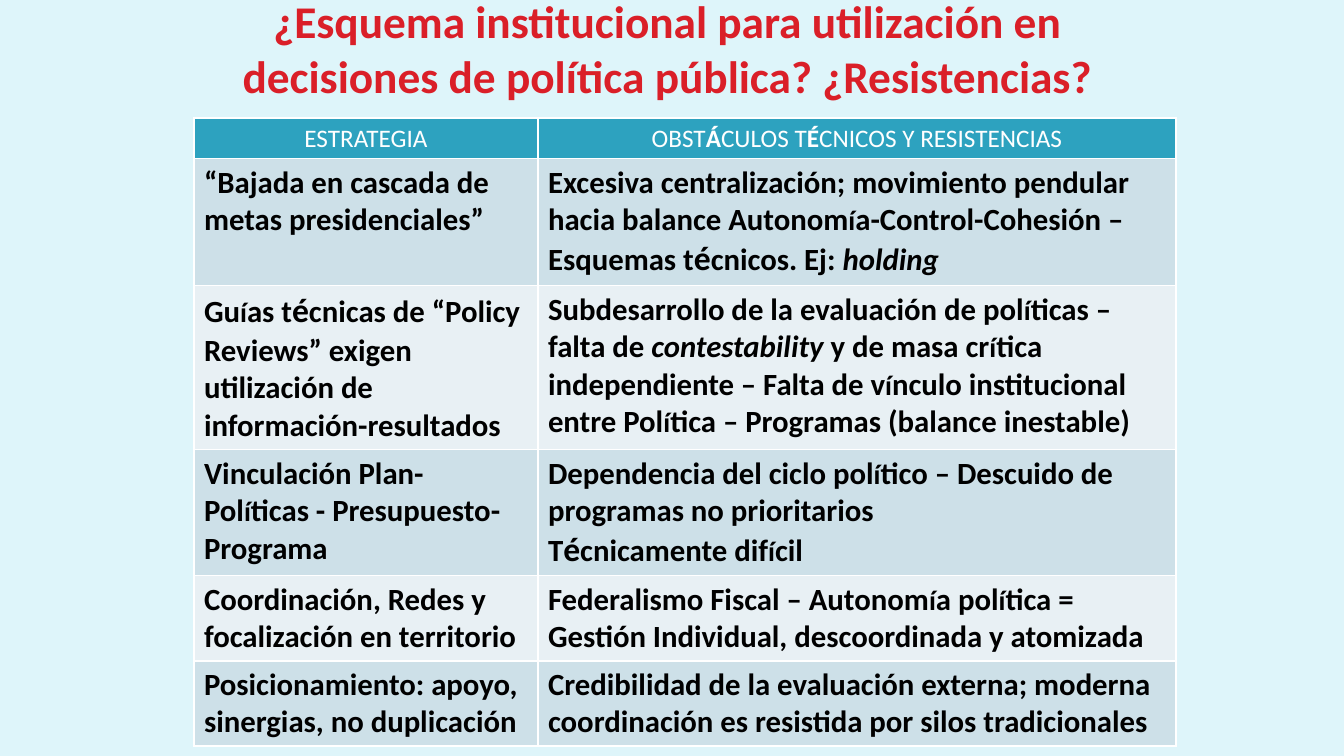
from itertools import groupby

from pptx import Presentation
from pptx.dml.color import RGBColor
from pptx.enum.text import MSO_ANCHOR, MSO_AUTO_SIZE, PP_ALIGN
from pptx.util import Emu, Pt

RED = RGBColor(0xDA, 0x1F, 0x28)
TEAL = RGBColor(0x2D, 0xA2, 0xBF)
PALE = RGBColor(0xDE, 0xF5, 0xFA)
DARK = RGBColor(0xCD, 0xE0, 0xE8)
LIGHT = RGBColor(0xE8, 0xF0, 0xF4)
WHITE = RGBColor(0xFF, 0xFF, 0xFF)
BLACK = RGBColor(0x00, 0x00, 0x00)

TITLE = "¿Esquema institucional para utilización en decisiones de política pública? ¿Resistencias?"
HEADS = ["ESTRATEGIA", "OBSTÁCULOS TÉCNICOS Y RESISTENCIAS"]
# Asterisks enclose italic words
ROWS = [
    ["“Bajada en cascada de metas presidenciales”",
     "Excesiva centralización; movimiento pendular hacia balance "
     "Autonomía-Control-Cohesión – Esquemas técnicos. Ej: *holding*"],
    ["Guías técnicas de “Policy Reviews” exigen utilización de información-resultados",
     "Subdesarrollo de la evaluación de políticas – falta de *contestability* y de masa "
     "crítica independiente – Falta de vínculo institucional entre Política – Programas "
     "(balance inestable)"],
    ["Vinculación Plan-Políticas - Presupuesto-Programa",
     "Dependencia del ciclo político – Descuido de programas no prioritarios\n"
     "Técnicamente difícil"],
    ["Coordinación, Redes y focalización en territorio",
     "Federalismo Fiscal – Autonomía política = Gestión Individual, descoordinada y atomizada"],
    ["Posicionamiento: apoyo, sinergias, no duplicación",
     "Credibilidad de la evaluación externa; moderna coordinación es resistida por silos "
     "tradicionales"],
]
WIDTHS = [344, 638]
HEIGHTS = [40, 127, 164, 126, 85, 85]
SIZES = {"í": 20, "é": 24}  # accented letters with their own size


def px(n):
    return Emu(round(n * 914400 / 100.8))


def add_run(para, text, size, color, bold=True, italic=False):
    run = para.add_run()
    run.text = text
    font = run.font
    font.name = "Calibri"
    font.size = Pt(size)
    font.bold = bold
    font.italic = italic
    font.color.rgb = color


# Slide and background
deck = Presentation()
deck.slide_width, deck.slide_height = px(1344), px(756)
slide = deck.slides.add_slide(deck.slide_layouts[5])
slide.background.fill.solid()
slide.background.fill.fore_color.rgb = PALE

# Title, raised above the table by its bottom inset
title = slide.shapes.title
title.left, title.top, title.width, title.height = px(210), px(30), px(915), px(96)
frame = title.text_frame
frame.auto_size = MSO_AUTO_SIZE.NONE
frame.word_wrap = True
frame.vertical_anchor = MSO_ANCHOR.MIDDLE
frame.margin_top, frame.margin_bottom = px(5), px(65)
para = frame.paragraphs[0]
para.alignment = PP_ALIGN.CENTER
add_run(para, TITLE, 32.4, RED)

# Table grid
table = slide.shapes.add_table(len(HEIGHTS), len(WIDTHS), px(194), px(118),
                               px(sum(WIDTHS)), px(sum(HEIGHTS))).table
for col, width in zip(table.columns, WIDTHS):
    col.width = px(width)
for row, height in zip(table.rows, HEIGHTS):
    row.height = px(height)

# Header row, accented capitals in bold
for c, head in enumerate(HEADS):
    cell = table.cell(0, c)
    cell.fill.solid()
    cell.fill.fore_color.rgb = TEAL
    para = cell.text_frame.paragraphs[0]
    para.alignment = PP_ALIGN.CENTER
    for bold, part in groupby(head, lambda ch: ch in "ÁÉ"):
        add_run(para, "".join(part), 18, WHITE, bold)

# Body rows, banded
for r, texts in enumerate(ROWS, 1):
    for c, text in enumerate(texts):
        cell = table.cell(r, c)
        cell.fill.solid()
        cell.fill.fore_color.rgb = DARK if r % 2 else LIGHT
        frame = cell.text_frame
        for n, line in enumerate(text.split("\n")):
            para = frame.add_paragraph() if n else frame.paragraphs[0]
            for k, piece in enumerate(line.split("*")):
                for size, part in groupby(piece, lambda ch: SIZES.get(ch, 22)):
                    add_run(para, "".join(part), size, BLACK, italic=k % 2 == 1)

deck.save("out.pptx")
